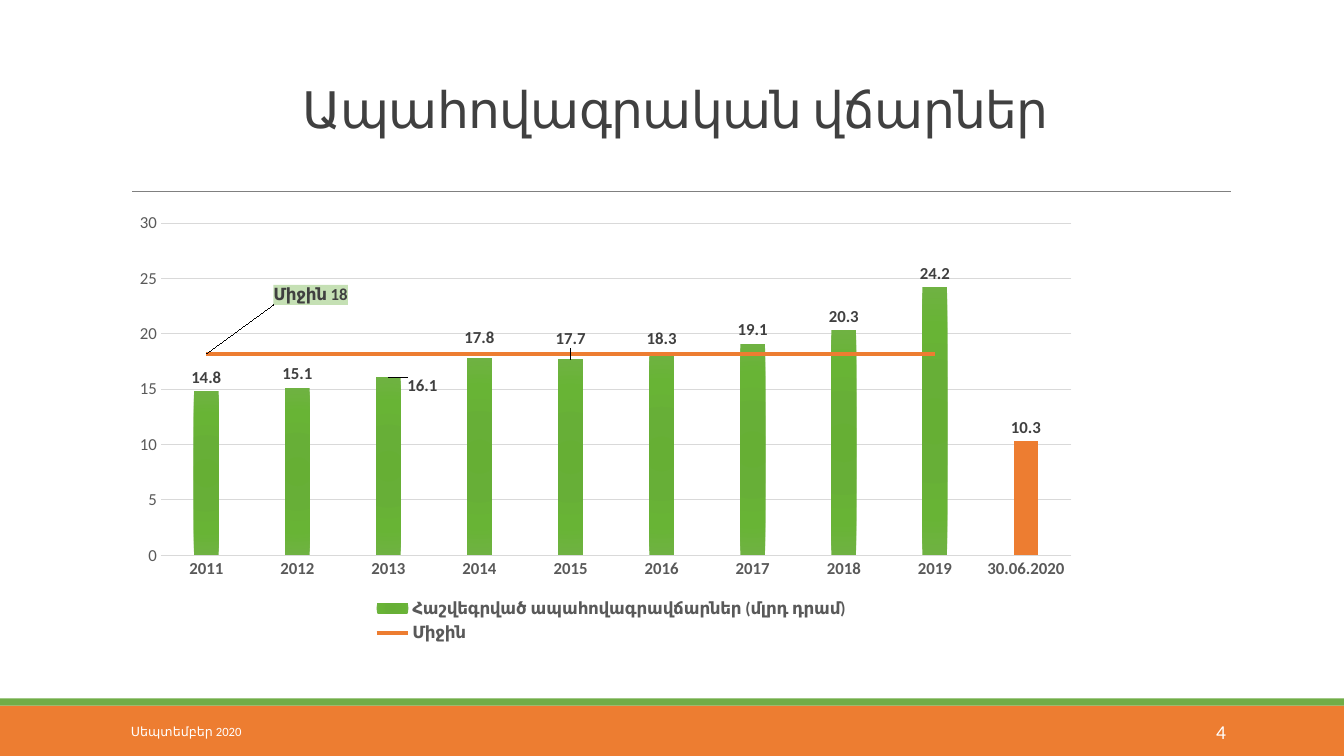
from pptx import Presentation
from pptx.chart.data import CategoryChartData
from pptx.dml.color import RGBColor
from pptx.enum import chart as kinds, shapes, text
from pptx.oxml import parse_xml
from pptx.oxml.ns import nsdecls, qn
from pptx.util import Inches, Pt

# Content
TITLE = "Ապահովագրական վճարներ"
DATE, PAGE = "Սեպտեմբեր 2020", "4"
YEARS = [str(year) for year in range(2011, 2020)] + ["30.06.2020"]
PAID = ("Հաշվեգրված ապահովագրավճարներ (մլրդ դրամ)",
        [14.8, 15.1, 16.1, 17.8, 17.7, 18.3, 19.1, 20.3, 24.2, 10.3])
MEAN = ("Միջին", [18.2] * 9 + [None])
MOVED = {2: (0.035, 0.052), 3: (0, -0.014), 4: (0, -0.016)}  # label shifts
HEX = {"orange": "ED7D31", "green": "70AD47", "rule": "808080", "title": "404040",
       "axis": "595959", "grid": "D9D9D9", "white": "FFFFFF", "tag": "C5E0B4"}
BLEND = [(0, "66AF34"), (34, "67AF37"), (70, "68B435"), (100, "6FB242")]
FONT = "Calibri"


def tint(name):
    return RGBColor.from_string(HEX[name])


def style(font, size, color, bold=False):
    font.name, font.size, font.bold = FONT, Pt(size), bold
    font.color.rgb = tint(color)


def write(words, box, size, color, align="LEFT", anchor="MIDDLE", holder=None):
    box = [Inches(n) for n in box]
    shape = holder or slide.shapes.add_textbox(*box)
    shape.left, shape.top, shape.width, shape.height = box
    frame = shape.text_frame
    frame.word_wrap, frame.auto_size = True, text.MSO_AUTO_SIZE.NONE
    frame.vertical_anchor = text.MSO_ANCHOR[anchor]
    para = frame.paragraphs[0]
    para.alignment = text.PP_ALIGN[align]
    run = para.add_run()
    run.text = words
    style(run.font, size, color)
    return para


def band(top, high, color):
    shape = slide.shapes.add_shape(shapes.MSO_SHAPE.RECTANGLE, 0, Inches(top),
                                   deck.slide_width, Inches(high))
    shape.shadow.inherit = False
    shape.fill.solid()
    shape.fill.fore_color.rgb = tint(color)
    shape.line.fill.background()


def node(tag, inner="", **attrs):
    pairs = "".join(f' {key}="{val}"' for key, val in attrs.items())
    return parse_xml(f'<{tag} {nsdecls("c", "a")}{pairs}>{inner}</{tag}>')


def drop(parent, tag):
    for old in parent.findall(qn(tag)):
        parent.remove(old)


def place(parent, index, x, y, size=None, inner=False):
    drop(parent, "c:layout")
    parts = '<c:layoutTarget val="inner"/>' if inner else ""
    if size:
        parts += '<c:xMode val="edge"/><c:yMode val="edge"/>'
    parts += f'<c:x val="{x}"/><c:y val="{y}"/>'
    if size:
        parts += f'<c:w val="{size[0]}"/><c:h val="{size[1]}"/>'
    parent.insert(index, node("c:layout", f"<c:manualLayout>{parts}</c:manualLayout>"))


def shift(series, index, x, y, spot):
    label = series.points[index].data_label
    style(label.font, 12, "title", True)
    label.position = kinds.XL_LABEL_POSITION[spot]
    item = label._get_or_add_dLbl()
    place(item, 1, x, y)
    return item


def leader(series, shown):
    c15 = "http://schemas.microsoft.com/office/drawing/2012/chart"
    ext = (f'<c:ext uri="{{CE6537A1-D6FC-4f65-9D91-7224C49458BB}}" xmlns:c15="{c15}">'
           f'<c15:showLeaderLines val="{shown}"/></c:ext>')
    series.data_labels._element.append(node("c:extLst", ext))


# Slide, bands and rule
deck = Presentation()
deck.slide_width, deck.slide_height = Inches(13.33), Inches(7.5)
slide = deck.slides.add_slide(deck.slide_layouts[5])
band(7, 0.5, "orange")
band(6.93, 0.07, "green")
rule = slide.shapes.add_connector(shapes.MSO_CONNECTOR.STRAIGHT, Inches(1.31),
                                  Inches(1.9), Inches(12.21), Inches(1.9))
rule.line.color.rgb, rule.line.width = tint("rule"), Pt(0.5)
rule._element.spPr.append(node("a:effectLst"))

# Title and footer
head = write(TITLE, (1.2, 0.71, 11, 0.72), 36, "title", "CENTER", "BOTTOM",
             slide.shapes.title)
head.line_spacing = 0.85
head.runs[0].font._element.set("spc", "-50")
write(DATE, (1.2, 7.06, 2.7, 0.4), 9, "white")
write(PAGE, (10.83, 7.06, 1.43, 0.4), 14, "white", "RIGHT")

# Chart
data = CategoryChartData()
data.categories = YEARS
for name, vals in (PAID, MEAN):
    data.add_series(name, vals)
chart = slide.shapes.add_chart(kinds.XL_CHART_TYPE.COLUMN_CLUSTERED, Inches(1.2),
                               Inches(2.02), Inches(9.63), Inches(4.4), data).chart
chart.has_title = False
chart.font.name, chart.font.size = FONT, Pt(10)
bars = chart.plots[0]
bars.gap_width, bars.overlap, bars.vary_by_categories = 269, -25, False

# The second series becomes a line on the same axes
group = bars._element
ser = group.findall(qn("c:ser"))[1]
drop(ser, "c:invertIfNegative")
line = node("c:lineChart", '<c:grouping val="standard"/><c:varyColors val="0"/>')
line.append(ser)
line.append(node("c:marker", val=1))
for axis in group.findall(qn("c:axId")):
    line.append(node("c:axId", val=axis.get("val")))
group.addnext(line)
place(group.getparent(), 0, 0.041, 0.044, (0.938, 0.749), inner=True)

# Columns
paid = chart.plots[0].series[0]
stops = "".join(f'<a:gs pos="{pos * 1000}"><a:srgbClr val="{hue}"/></a:gs>'
                for pos, hue in BLEND)
edges = " ".join(f'{side}="100000"' for side in "ltrb")
paid.format.fill.background()
fill = paid._element.find(qn("c:spPr")).find(qn("a:noFill"))
fill.getparent().replace(fill, node(
    "a:gradFill", f'<a:gsLst>{stops}</a:gsLst><a:path path="circle">'
    f'<a:fillToRect {edges}/></a:path>'))
last = paid.points[len(YEARS) - 1].format.fill
last.solid()
last.fore_color.rgb = tint("orange")
tags = paid.data_labels
tags.show_value, tags.position = True, kinds.XL_LABEL_POSITION.OUTSIDE_END
style(tags.font, 12, "title", True)
for index, (x, y) in MOVED.items():
    shift(paid, index, x, y, "OUTSIDE_END")
leader(paid, 0)

# Mean line and its tag
mean = chart.plots[1].series[0]
mean.smooth = False
mean.marker.style = kinds.XL_MARKER_STYLE.NONE
mean.format.line.color.rgb, mean.format.line.width = tint("orange"), Pt(2.75)
mean.data_labels.show_value = False
tag = shift(mean, 0, 0.065, -0.133, "RIGHT")
drop(tag, "c:spPr")
tag.insert(2, node("c:numFmt", formatCode="0", sourceLinked=0))
tag.insert(3, node("c:spPr", f'<a:solidFill><a:srgbClr val="{HEX["tag"]}"/></a:solidFill>'))
tag.find(qn("c:showSerName")).set("val", "1")
tag.append(node("c:separator", " "))
leader(mean, 1)

# Axes and legend
for axis, bold in ((chart.category_axis, True), (chart.value_axis, False)):
    style(axis.tick_labels.font, 12, "axis", bold)
    axis.major_tick_mark = axis.minor_tick_mark = kinds.XL_TICK_MARK.NONE
base = chart.category_axis.format.line
base.color.rgb, base.width = tint("grid"), Pt(1)
scale = chart.value_axis
scale.minimum_scale, scale.maximum_scale, scale.major_unit = 0, 30, 5
scale.format.line.fill.background()
grid = scale.major_gridlines.format.line
grid.color.rgb, grid.width = tint("grid"), Pt(0.75)
chart.has_legend = True
key = chart.legend
key.position, key.include_in_layout = kinds.XL_LEGEND_POSITION.BOTTOM, False
style(key.font, 12, "axis", True)
place(key._element, 1, 0.25, 0.88, (0.51, 0.12))

deck.save("out.pptx")
